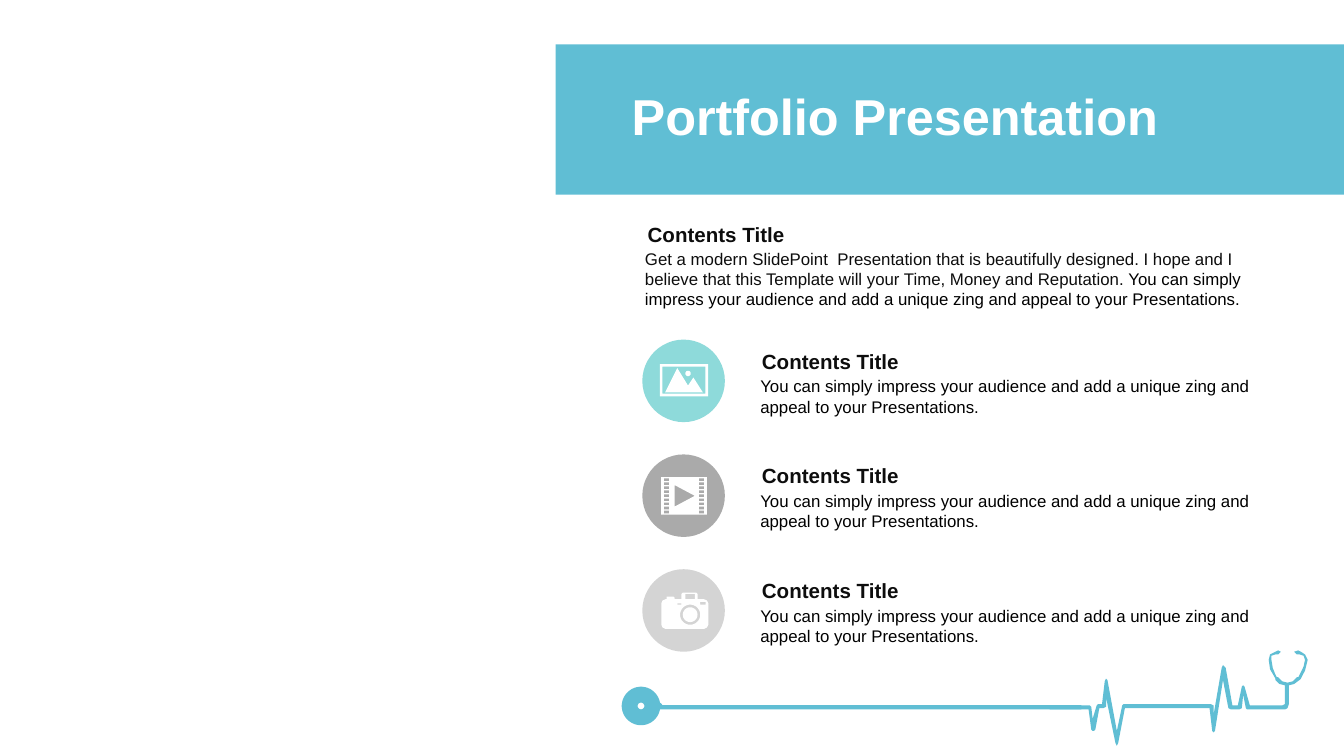
from math import cos, pi, sin

from lxml import etree
from pptx import Presentation
from pptx import util as u
from pptx.dml.color import RGBColor
from pptx.enum import shapes, text

COLORS = {
    "accent": "60BED4",
    "teal": "8EDADA",
    "gray": "AAAAAA",
    "light": "D4D4D4",
    "white": "FFFFFF",
    "heading": "0D0D0D",
    "body": "000000",
}
HEADING = "Contents Title"
INTRO = (
    "Get a modern SlidePoint  Presentation that is beautifully designed. "
    "I hope and I believe that this Template will your Time, Money and Reputation. "
)
BENEFIT = (
    "You can simply impress your audience and add a unique zing "
    "and appeal to your Presentations."
)

UNITS = 100
HUNDREDTH_INCH = u.Cm(2.54) / 100

STETHOSCOPE = [
    (973, 491), (971, 487), (968, 485), (966, 484), (963, 485), (965, 487),
    (967, 487), (970, 488), (971, 491), (970, 496), (967, 502), (966, 504),
    (965, 504), (962, 507), (958, 508), (954, 507), (951, 504), (950, 504),
    (949, 502), (947, 497), (946, 491), (946, 488), (949, 487), (951, 487),
    (953, 485), (951, 484), (949, 485), (945, 487), (944, 491), (945, 498),
    (949, 505), (949, 506), (952, 509), (956, 510), (956, 521), (956, 524),
    (954, 525),
]
PULSE_TOP = [
    (930, 525), (926, 511), (925, 510), (924, 511), (921, 525), (917, 525),
    (912, 497), (910, 495), (909, 497), (903, 532), (903, 525), (901, 524),
    (836, 524), (835, 525), (831, 544), (824, 506), (823, 505), (822, 507),
    (820, 524), (817, 524), (816, 525), (813, 535), (812, 526), (811, 525),
    (781, 525),
]
PULSE_BOTTOM = [
    (781, 528), (810, 528), (812, 543), (813, 544), (814, 544), (815, 543),
    (818, 527), (821, 527), (823, 526), (823, 519), (830, 553), (831, 555),
    (832, 553), (837, 527), (900, 527), (902, 544), (903, 545), (904, 544),
    (910, 506), (914, 527), (916, 528), (922, 528), (924, 527), (925, 517),
    (927, 527), (928, 528), (954, 528), (956, 528), (958, 527), (959, 524),
    (959, 510), (963, 509), (967, 506), (968, 505), (971, 499),
]
CAMERA_BODY = [
    (508, 441), (518, 441), (519, 442), (519, 446), (524, 446), (526, 447),
    (527, 449), (527, 465), (526, 467), (524, 468), (495, 468), (493, 467),
    (492, 465), (492, 449), (493, 447), (495, 446), (496, 446), (496, 444),
    (501, 444), (502, 445), (502, 446), (507, 446), (507, 442),
]


def box(x, y, w, h):
    return [(x, y), (x + w, y), (x + w, y + h), (x, y + h)]


def circle(cx, cy, r, steps=32):
    angles = [2 * pi * i / steps for i in range(steps)]
    return [(cx + r * cos(a), cy + r * sin(a)) for a in angles]


def picture_icon():
    mountains = [(504, 274), (512, 287), (516, 281), (523, 292), (495, 292)]
    return [box(491, 271, 36, 24), box(493, 273, 32, 20), mountains, circle(512, 278, 2)]


def film_icon():
    holes = [box(x, 356 + 3 * i, 4, 2) for x in (494, 520) for i in range(9)]
    play = [(502, 361), (502, 377), (517, 369)]
    return [box(492, 355, 34, 28), *holes, play]


def camera_icon():
    windows = [box(504, 449, 3, 1), box(521, 448, 4, 2), box(510, 442, 7, 4)]
    lens = [circle(513.5, 457.5, r) for r in (7.5, 5.5)]
    return [CAMERA_BODY, *windows, *lens]


def paint(sp, color):
    sp.shadow.inherit = False
    sp.fill.solid()
    sp.fill.fore_color.rgb = RGBColor.from_string(COLORS[color])
    sp.line.fill.background()


def add_filled(s, kind, x, y, w, h, color):
    sp = s.shapes.add_shape(kind, u.Cm(x), u.Cm(y), u.Cm(w), u.Cm(h))
    paint(sp, color)
    return sp


def add_ring(s, x, y, size, width):
    sp = add_filled(s, shapes.MSO_SHAPE.OVAL, x, y, size, size, "accent")
    sp.fill.background()
    sp.line.color.rgb = RGBColor.from_string(COLORS["accent"])
    sp.line.width = u.Cm(width)


def add_outline(s, contours, color):
    scaled = [[(x * UNITS, y * UNITS) for x, y in c] for c in contours]
    fb = s.shapes.build_freeform(*scaled[0][0], scale=HUNDREDTH_INCH / UNITS)
    fb.add_line_segments(scaled[0][1:], close=True)
    for contour in scaled[1:]:
        fb.move_to(*contour[0])
        fb.add_line_segments(contour[1:], close=True)
    paint(fb.convert_to_shape(), color)


def add_text(s, x, y, w, h, parts, size, bold=False, inset=(0.25, 0.13)):
    tf = s.shapes.add_textbox(u.Cm(x), u.Cm(y), u.Cm(w), u.Cm(h)).text_frame
    tf.word_wrap = True
    tf.margin_left = tf.margin_right = u.Cm(inset[0])
    tf.margin_top = tf.margin_bottom = u.Cm(inset[1])
    p = tf.paragraphs[0]
    for content, color in parts:
        r = p.add_run()
        r.text = content
        r.font.name = "Arial"
        r.font.size = u.Pt(size)
        r.font.bold = bold
        r.font.color.rgb = RGBColor.from_string(COLORS[color])
    return tf


def add_heading(s, x, y, w):
    add_text(s, x, y, w, 0.74, [(HEADING, "heading")], 11, True, (0.3, 0.13))


def add_banner(s):
    add_filled(s, shapes.MSO_SHAPE.RECTANGLE, 10.5, 0.84, 14.9, 2.84, "accent")
    title = [("Portfolio Presentation", "white")]
    tf = add_text(s, 11.76, 1.52, 12.42, 1.47, title, 27, True, (0.18, 0.1))
    tf.vertical_anchor = text.MSO_ANCHOR.MIDDLE
    tf.paragraphs[0].line_spacing = 0.9


def add_stethoscope(s):
    add_outline(s, [STETHOSCOPE + PULSE_TOP + PULSE_BOTTOM], "accent")
    add_ring(s, 11.9, 13.13, 0.43, 0.3)
    joint = add_filled(s, shapes.MSO_SHAPE.ROUNDED_RECTANGLE, 12.32, 13.28, 0.2, 0.13, "accent")
    joint.adjustments[0] = 0.5
    add_filled(s, shapes.MSO_SHAPE.RECTANGLE, 12.24, 13.33, 8.2, 0.08, "accent")


def add_row(s, y, color, icon):
    add_filled(s, shapes.MSO_SHAPE.OVAL, 12.14, y, 1.56, 1.56, color)
    add_outline(s, icon, "white")
    add_text(s, 14.12, y + 0.56, 9.86, 1.02, [(BENEFIT, "body")], 9)
    add_heading(s, 14.1, y + 0.04, 9.91)


def main():
    prs = Presentation()
    prs.slide_width, prs.slide_height = u.Cm(25.4), u.Cm(14.29)
    s = prs.slides.add_slide(prs.slide_layouts[6])
    add_banner(s)
    add_stethoscope(s)
    add_text(s, 11.94, 4.57, 11.99, 1.42, [(INTRO, "heading"), (BENEFIT, "body")], 9)
    add_heading(s, 11.94, 4.06, 11.99)
    rows = [("teal", picture_icon()), ("gray", film_icon()), ("light", camera_icon())]
    for i, (color, icon) in enumerate(rows):
        add_row(s, 6.42 + 2.17 * i, color, icon)
    prs.save("out.pptx")


if __name__ == "__main__":
    main()
